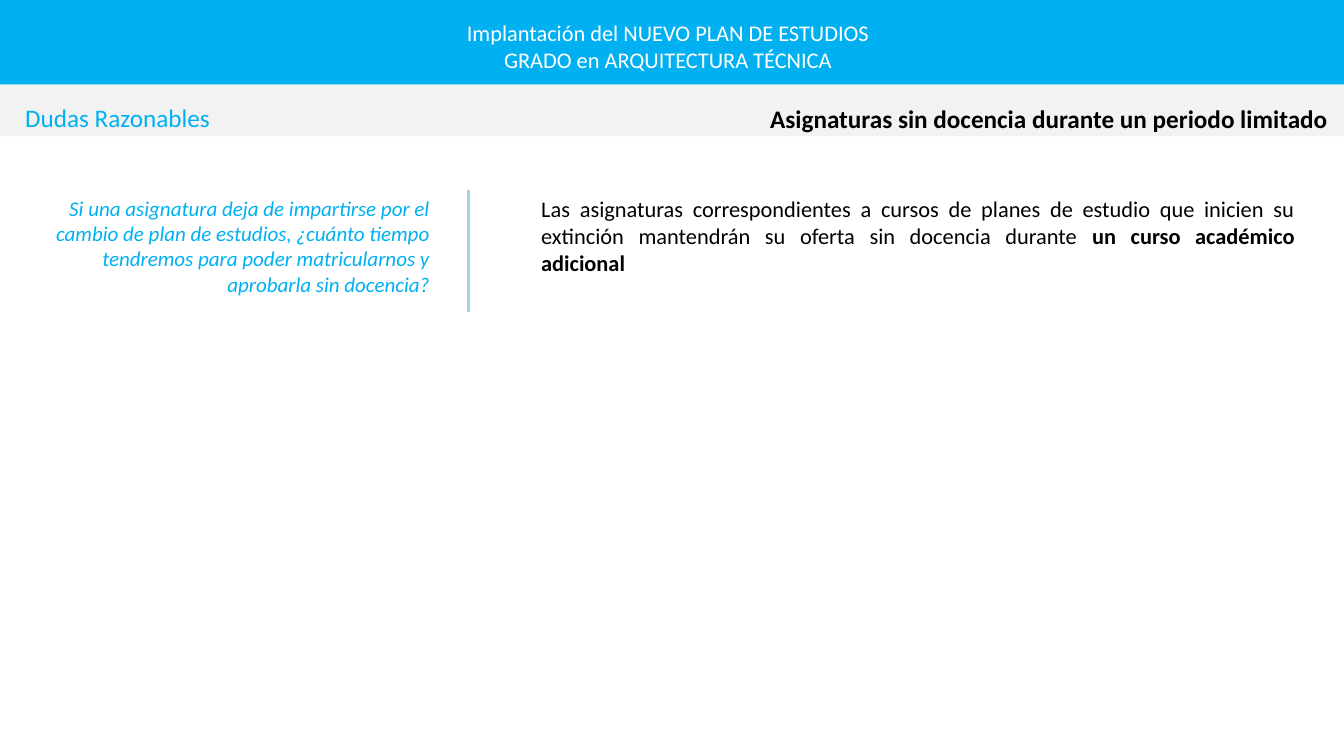
import dataclasses
import typing

import pptx
import pptx.dml.color
import pptx.enum.shapes
import pptx.enum.text
import pptx.oxml
import pptx.oxml.ns
import pptx.util

Inches = pptx.util.Inches
Align = pptx.enum.text.PP_ALIGN


# Theme: colours and type sizes
@dataclasses.dataclass(frozen=True)
class Theme:
    font: str = "Calibri"
    blue: str = "00B0F0"
    grey: str = "F2F2F2"
    rule: str = "A4D3E6"
    black: str = "000000"
    white: str = "FFFFFF"
    heading: float = 18
    text: float = 16
    question: float = 15


THEME = Theme()


class Area(typing.NamedTuple):
    left: float
    top: float
    width: float
    height: float

    def lengths(self) -> list[int]:
        return [Inches(value) for value in self]


class Span(typing.NamedTuple):
    text: str
    bold: bool = False


class Band(typing.NamedTuple):
    area: Area
    colour: str


@dataclasses.dataclass(frozen=True)
class TextBlock:
    area: Area
    paras: list[list[Span]]
    size: float
    colour: str
    align: Align
    side_inset: float = 0.05
    italic: bool = False
    space_after: float = 0
    is_title: bool = False


WIDTH, HEIGHT = 13.33, 7.5
HEADER_HEIGHT, SUBHEADER_HEIGHT = 0.84, 0.51
HEADING_TOP, CONTENT_TOP = 0.97, 1.89
RULE_X, RULE_BOTTOM = 4.65, 3.1

BANDS = [
    Band(Area(0, 0, WIDTH, HEADER_HEIGHT), THEME.blue),
    Band(Area(0, HEADER_HEIGHT, WIDTH, SUBHEADER_HEIGHT), THEME.grey),
]

BLOCKS = [
    TextBlock(
        Area(0.4, CONTENT_TOP, 3.96, 1.11),
        [[Span("Si una asignatura deja de impartirse por el cambio de plan de estudios, "
               "¿cuánto tiempo tendremos para poder matricularnos y aprobarla sin docencia?")]],
        THEME.question, THEME.blue, Align.RIGHT, side_inset=0.1, italic=True,
    ),
    TextBlock(
        Area(5.27, CONTENT_TOP, 7.67, 0.91),
        [[Span("Las asignaturas correspondientes a cursos de planes de estudio que inicien "
               "su extinción mantendrán su oferta sin docencia durante "),
          Span("un curso académico adicional", bold=True)]],
        THEME.text, THEME.black, Align.JUSTIFY, side_inset=0.1, space_after=6,
    ),
    TextBlock(
        Area(0.2, HEADING_TOP, 2.63, 0.4),
        [[Span("Dudas Razonables")]],
        THEME.heading, THEME.blue, Align.LEFT,
    ),
    TextBlock(
        Area(6.55, HEADING_TOP, 6.67, 0.4),
        [[Span("Asignaturas sin docencia durante un periodo limitado", bold=True)]],
        THEME.heading, THEME.black, Align.RIGHT, is_title=True,
    ),
    TextBlock(
        Area(2.36, 0.14, 8.58, 0.64),
        [[Span("Implantación del NUEVO PLAN DE ESTUDIOS ")],
         [Span("GRADO en ARQUITECTURA TÉCNICA ")]],
        THEME.text, THEME.white, Align.CENTER,
    ),
]


def set_attributes(target: typing.Any, values: dict[str, typing.Any]) -> None:
    for name, value in values.items():
        setattr(target, name, value)


def rgb(colour: str) -> pptx.dml.color.RGBColor:
    return pptx.dml.color.RGBColor.from_string(colour)


def draw_band(page: typing.Any, band: Band) -> None:
    box = page.shapes.add_shape(
        pptx.enum.shapes.MSO_SHAPE.RECTANGLE, *band.area.lengths())
    box.shadow.inherit = False
    box.fill.solid()
    box.fill.fore_color.rgb = rgb(band.colour)
    box.line.fill.background()


def draw_rule(page: typing.Any) -> None:
    rule = page.shapes.add_connector(
        pptx.enum.shapes.MSO_CONNECTOR.STRAIGHT,
        Inches(RULE_X), Inches(RULE_BOTTOM), Inches(RULE_X), Inches(CONTENT_TOP))
    rule.line.color.rgb = rgb(THEME.rule)
    rule.line.width = pptx.util.Pt(2.25)
    properties = rule.element.find(pptx.oxml.ns.qn("p:spPr"))
    properties.append(pptx.oxml.parse_xml(
        f'<a:effectLst {pptx.oxml.ns.nsdecls("a")}/>'))


def draw_text(page: typing.Any, block: TextBlock) -> None:
    if block.is_title:
        box = page.shapes.title
        # Bring the title in front of the bands
        box.element.getparent().append(box.element)
        set_attributes(box, dict(zip(("left", "top", "width", "height"),
                                     block.area.lengths())))
    else:
        box = page.shapes.add_textbox(*block.area.lengths())
    frame = box.text_frame
    set_attributes(frame, {
        "word_wrap": True,
        "auto_size": pptx.enum.text.MSO_AUTO_SIZE.SHAPE_TO_FIT_TEXT,
        "vertical_anchor": pptx.enum.text.MSO_ANCHOR.TOP,
        "margin_left": Inches(block.side_inset),
        "margin_right": Inches(block.side_inset),
        "margin_top": Inches(0.05),
        "margin_bottom": Inches(0.05),
    })
    for index, spans in enumerate(block.paras):
        para = frame.add_paragraph() if index else frame.paragraphs[0]
        set_attributes(para, {
            "alignment": block.align,
            "space_after": pptx.util.Pt(block.space_after),
        })
        for span in spans:
            run = para.add_run()
            run.text = span.text
            set_attributes(run.font, {
                "name": THEME.font,
                "size": pptx.util.Pt(block.size),
                "bold": span.bold,
                "italic": block.italic,
            })
            run.font.color.rgb = rgb(block.colour)


def main() -> None:
    deck = pptx.Presentation()
    set_attributes(deck, {"slide_width": Inches(WIDTH), "slide_height": Inches(HEIGHT)})
    page = deck.slides.add_slide(deck.slide_layouts.get_by_name("Title Only"))
    # Bands and divider first, text in front
    for band in BANDS:
        draw_band(page, band)
    draw_rule(page)
    for block in BLOCKS:
        draw_text(page, block)
    deck.save("out.pptx")


if __name__ == "__main__":
    main()
